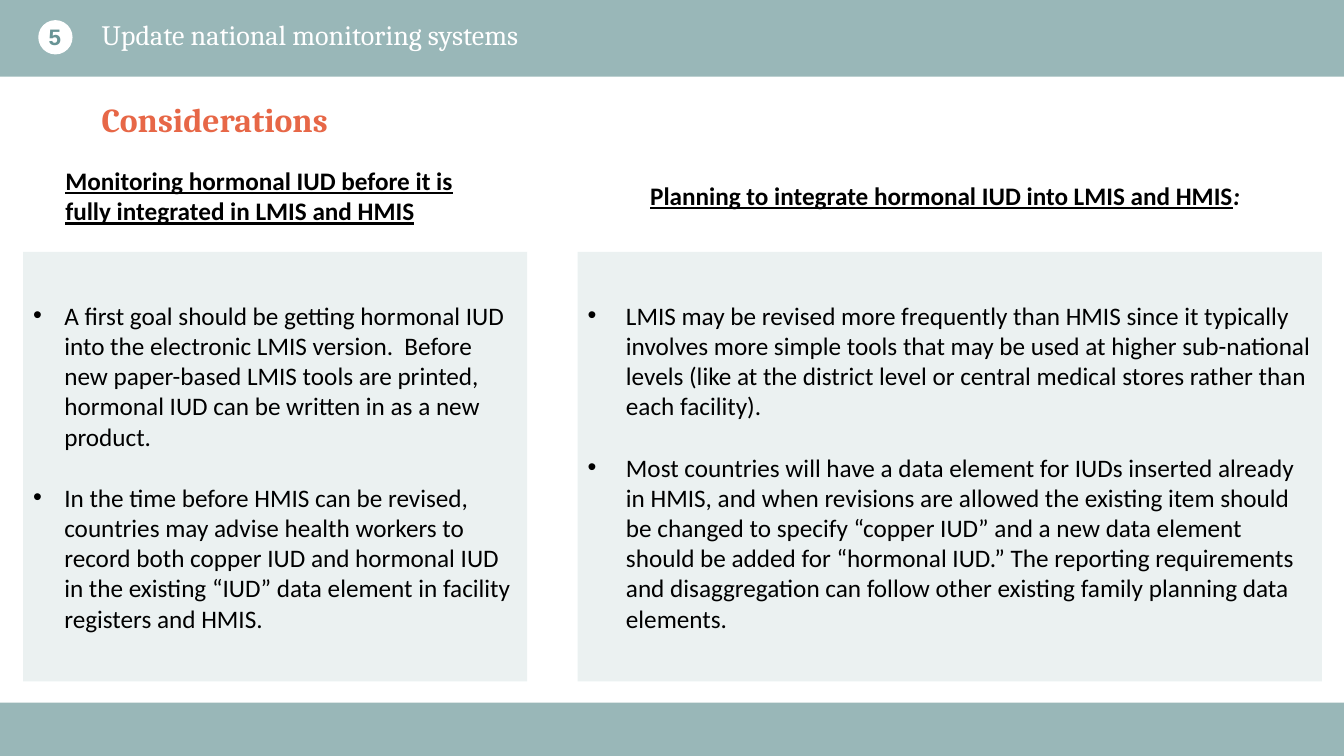
from dataclasses import dataclass

from lxml.etree import SubElement
from pptx import Presentation
from pptx.dml.color import RGBColor as Rgb
from pptx.enum.shapes import MSO_SHAPE as Preset
from pptx.enum.text import MSO_ANCHOR as Anchor, PP_ALIGN as Align
from pptx.oxml.ns import qn
from pptx.util import Emu, Pt

PX = 9144  # one hundredth of an inch
PAGE_WIDTH, PAGE_HEIGHT = 1333, 750


@dataclass(frozen=True)
class Theme:
    teal: str = "99B7B8"
    deep_teal: str = "689495"
    pale_teal: str = "EBF1F1"
    orange: str = "E76747"
    white: str = "FFFFFF"
    black: str = "000000"
    serif: str = "Cambria"
    sans: str = "Calibri"
    badge_font: str = "Arial"
    badge_size: int = 16
    title_size: int = 20
    section_size: int = 24
    body_size: int = 18
    item_gap: int = 22


THEME = Theme()


def px(*lengths):
    return [Emu(length * PX) for length in lengths]


def set_values(target, values):
    for name, value in values.items():
        setattr(target, name, value)


def add_span(para, text, font, size, color, **style):
    span = para.add_run()
    span.text = text
    set_values(span.font, {"name": font, "size": Pt(size), **style})
    span.font.color.rgb = Rgb.from_string(color)


def add_block(page, preset, place, color):
    block = page.shapes.add_shape(preset, *px(*place))
    block.shadow.inherit = False
    block.fill.solid()
    block.fill.fore_color.rgb = Rgb.from_string(color)
    block.line.fill.background()
    return block


def add_label(page, place, spans, frame_format=None, para_format=None):
    """Place a one-paragraph text box; spans are (text, font, size, color, style)."""
    frame = page.shapes.add_textbox(*px(*place)).text_frame
    set_values(frame, {"word_wrap": True, **(frame_format or {})})
    para = frame.paragraphs[0]
    set_values(para, para_format or {})
    for text, font, size, color, style in spans:
        add_span(para, text, font, size, color, **style)


def add_bullet(para, indent):
    properties = para._p.get_or_add_pPr()
    properties.set("marL", str(indent * PX))
    properties.set("indent", str(-indent * PX))
    SubElement(properties, qn("a:buFont"), typeface="Arial")
    SubElement(properties, qn("a:buChar"), char="•")


def add_card(page, left, width, indent, items):
    card = add_block(page, Preset.RECTANGLE, (left, 250, width, 426), THEME.pale_teal)
    frame = card.text_frame
    set_values(frame, {"word_wrap": True, "vertical_anchor": Anchor.MIDDLE})
    for index, item in enumerate(items):
        para = frame.add_paragraph() if index else frame.paragraphs[0]
        add_bullet(para, indent)
        para.alignment = Align.LEFT
        if index:
            para.space_before = Pt(THEME.item_gap)
        add_span(para, item, THEME.sans, THEME.body_size, THEME.black)


def main():
    deck = Presentation()
    deck.slide_width, deck.slide_height = px(PAGE_WIDTH, PAGE_HEIGHT)
    page = deck.slides.add_slide(deck.slide_layouts[6])

    # Header and footer bands
    for top, height in ((0, 76), (697, 53)):
        add_block(page, Preset.RECTANGLE, (0, top, PAGE_WIDTH, height), THEME.teal)

    # Step number and titles
    add_block(page, Preset.OVAL, (38, 20, 34, 34), THEME.white)
    no_margins = dict.fromkeys(
        ("margin_left", "margin_right", "margin_top", "margin_bottom"), 0)
    add_label(page, (40, 25, 29, 26),
              [("5", THEME.badge_font, THEME.badge_size, THEME.deep_teal, {"bold": True})],
              {"vertical_anchor": Anchor.MIDDLE, **no_margins},
              {"alignment": Align.CENTER, "line_spacing": 0.9})
    add_label(page, (91, 16, 1205, 43),
              [("Update national monitoring systems", THEME.serif, THEME.title_size,
                THEME.white, {})],
              para_format={"line_spacing": 0.9})
    add_label(page, (91, 101, 415, 43),
              [("Considerations", THEME.serif, THEME.section_size, THEME.orange,
                {"bold": True})],
              para_format={"line_spacing": 0.8})

    # Column headings
    heading = (THEME.sans, THEME.body_size, THEME.black)
    underlined = {"bold": True, "underline": True}
    add_label(page, (55, 159, 420, 71),
              [("Monitoring hormonal IUD before it is fully integrated in LMIS and HMIS",
                *heading, underlined)])
    add_label(page, (635, 174, 677, 40),
              [("Planning to integrate hormonal IUD into LMIS and HMIS", *heading, underlined),
               (":", *heading, {"bold": True, "italic": True})])

    # Column cards
    add_card(page, 23, 500, 31, (
        "A first goal should be getting hormonal IUD into the electronic LMIS version.  "
        "Before new paper-based LMIS tools are printed, hormonal IUD can be written in "
        "as a new product.",
        "In the time before HMIS can be revised, countries may advise health workers to "
        "record both copper IUD and hormonal IUD in the existing “IUD” data element in "
        "facility registers and HMIS.",
    ))
    add_card(page, 573, 738, 38, (
        "LMIS may be revised more frequently than HMIS since it typically involves more "
        "simple tools that may be used at higher sub-national levels (like at the district "
        "level or central medical stores rather than each facility).",
        "Most countries will have a data element for IUDs inserted already in HMIS, and "
        "when revisions are allowed the existing item should be changed to specify “copper "
        "IUD” and a new data element should be added for “hormonal IUD.” The reporting "
        "requirements and disaggregation can follow other existing family planning data "
        "elements.",
    ))

    deck.save("out.pptx")


if __name__ == "__main__":
    main()
